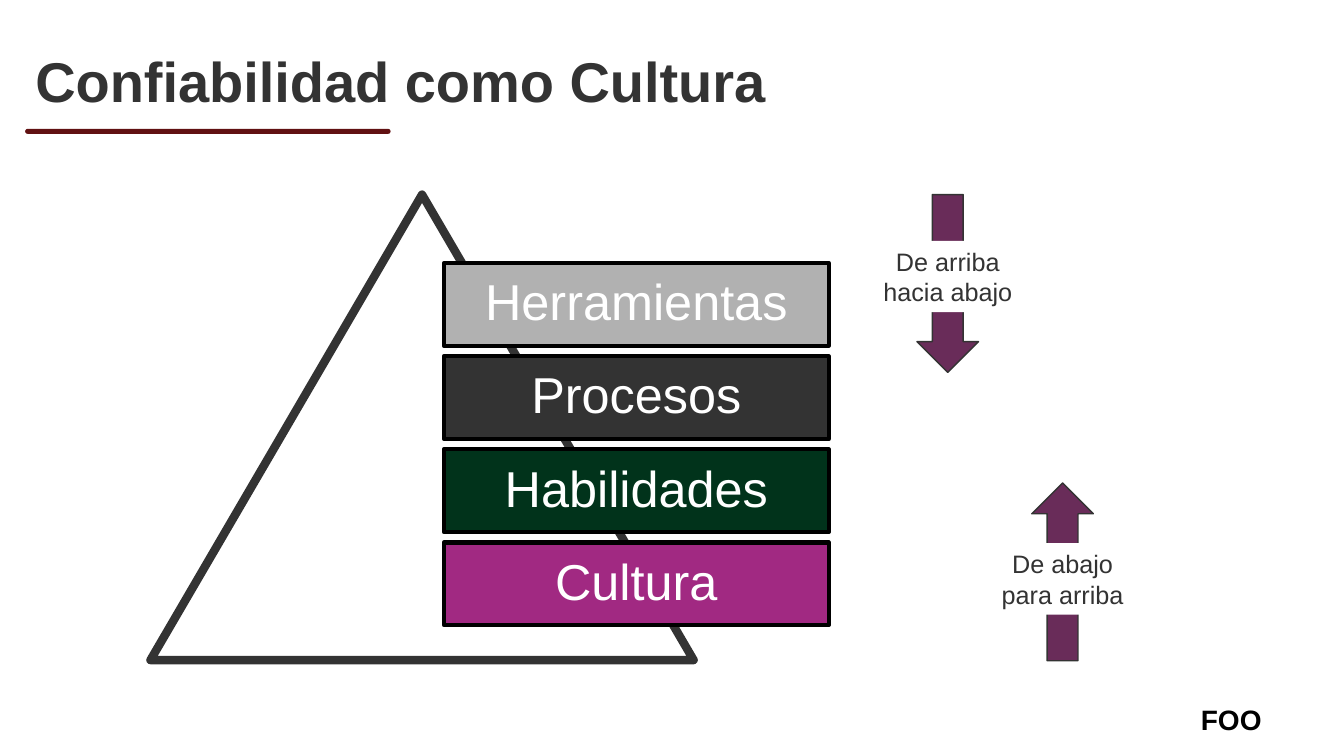
from pptx import Presentation
from pptx.dml.color import RGBColor
from pptx.enum import shapes, text
from pptx.util import Pt

COLORS = {
    "ink": "333333", "rule": "611112", "gray": "B1B1B1", "green": "01331B",
    "magenta": "A12982", "plum": "692C59", "white": "FFFFFF", "black": "000000",
}
SHAPE = shapes.MSO_SHAPE
ANCHOR = text.MSO_ANCHOR
CENTER = text.PP_ALIGN.CENTER


def rgb(name):
    return RGBColor.from_string(COLORS[name])


def add_shape(s, kind, box, fill=None, line=None, width=1):
    sp = s.shapes.add_shape(kind, *map(Pt, box))
    sp.shadow.inherit = False
    if fill:
        sp.fill.solid()
        sp.fill.fore_color.rgb = rgb(fill)
    else:
        sp.fill.background()
    if line:
        sp.line.color.rgb = rgb(line)
        sp.line.width = Pt(width)
    else:
        sp.line.fill.background()
    return sp


def write(sp, words, size, color, frame=None, para=None, bold=False):
    tf = sp.text_frame
    tf.word_wrap = True
    for name, value in (frame or {}).items():
        setattr(tf, name, value)
    p = tf.paragraphs[0]
    for name, value in (para or {}).items():
        setattr(p, name, value)
    r = p.add_run()
    r.text = words
    font = {"name": "Arial", "size": Pt(size), "bold": bold}
    for name, value in font.items():
        setattr(r.font, name, value)
    r.font.color.rgb = rgb(color)


def add_heading(s, x, y, w, h):
    # Title with the short rule beneath it
    title = s.shapes.title
    place = {"left": x, "top": y, "width": w, "height": h}
    for name, value in place.items():
        setattr(title, name, Pt(value))
    write(title, "Confiabilidad como Cultura", 40, "ink",
          {"vertical_anchor": ANCHOR.BOTTOM, "auto_size": text.MSO_AUTO_SIZE.NONE},
          {"alignment": text.PP_ALIGN.LEFT, "line_spacing": 0.9}, bold=True)
    rule = add_shape(s, SHAPE.ROUNDED_RECTANGLE, (x, y + h + 6.5, 261, 3.6), "rule")
    rule.adjustments[0] = 0.5


def add_pyramid(s, x, y, w, h, levels):
    # Outline triangle, then evenly stacked bars over its right side
    add_shape(s, SHAPE.ISOSCELES_TRIANGLE, (x, y, w, h), line="ink", width=6)
    bar_h, pitch = 59, 66.5
    frame = {f"margin_{side}": Pt(11) for side in ("left", "top", "right", "bottom")}
    frame["vertical_anchor"] = ANCHOR.MIDDLE
    for i, (name, fill) in enumerate(levels):
        box = (x + w / 2 + 15.5, y + 49 + i * pitch, 275, bar_h)
        bar = add_shape(s, SHAPE.RECTANGLE, box, fill, "black", 3)
        write(bar, name, 36, "white", frame,
              {"alignment": CENTER, "line_spacing": 0.9})


def add_direction(s, x, y, w, h, kind, words, label_y):
    # Block arrow crossed by a white label
    arrow_w = 44
    add_shape(s, kind, (x + (w - arrow_w) / 2, y, arrow_w, h), "plum", "ink")
    label = add_shape(s, SHAPE.RECTANGLE, (x, y + label_y, w, 51), "white")
    write(label, words, 18, "ink", {"vertical_anchor": ANCHOR.MIDDLE},
          {"alignment": CENTER})


def add_footer(s, x, y, w, h):
    # Footer mark
    sp = s.shapes.add_textbox(*map(Pt, (x, y, w, h)))
    write(sp, "FOO", 20, "black", para={"alignment": CENTER}, bold=True)


def main():
    prs = Presentation()
    prs.slide_width, prs.slide_height = Pt(960), Pt(540)
    s = prs.slides.add_slide(prs.slide_layouts[5])
    add_footer(s, 808.5, 498, 142, 32)
    add_heading(s, 18, 18, 768, 67.5)
    add_pyramid(s, 107.5, 139, 388, 332.5, [
        ("Herramientas", "gray"), ("Procesos", "ink"),
        ("Habilidades", "green"), ("Cultura", "magenta"),
    ])
    add_direction(s, 617, 139, 120, 127, SHAPE.DOWN_ARROW,
                  "De arriba hacia abajo", 33)
    add_direction(s, 699, 345, 120, 127, SHAPE.UP_ARROW,
                  "De abajo para arriba", 43)
    prs.save("out.pptx")


if __name__ == "__main__":
    main()
